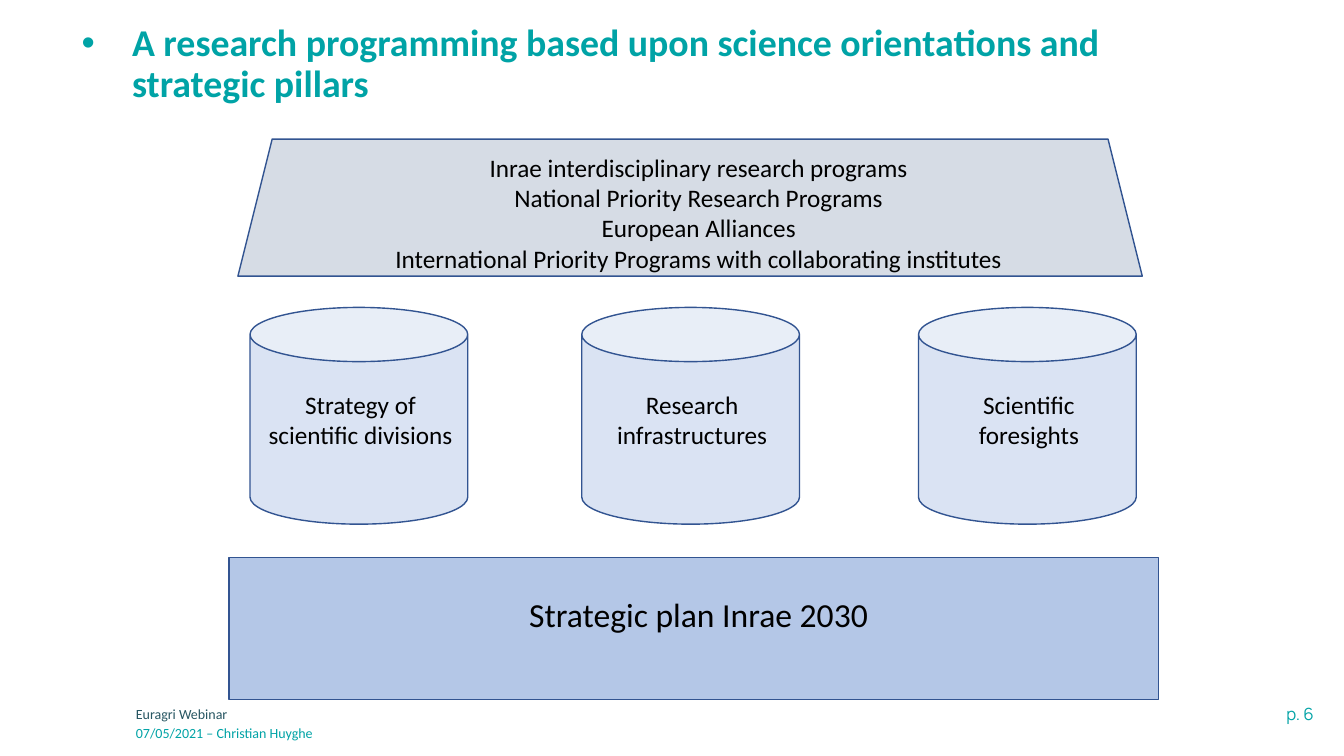
from lxml.etree import SubElement
from pptx import Presentation
from pptx.dml.color import RGBColor
from pptx.enum.shapes import MSO_SHAPE as Shape
from pptx.enum.text import MSO_ANCHOR as Anchor, PP_ALIGN as Align
from pptx.oxml.ns import qn
from pptx.util import Emu, Pt

PX = 9144
TEAL, DARK_TEAL, BLACK, OUTLINE = "00A3A6", "275662", "000000", "325491"


def px(length):
    return Emu(length * PX)


def color(value):
    return RGBColor.from_string(value)


def apply(target, values):
    for name, value in values.items():
        setattr(target, name, value)


def add_text(page, box, lines, size, hue=BLACK, align=Align.CENTER,
             font="Calibri", bold=False):
    area = page.shapes.add_textbox(*map(px, box))
    frame = area.text_frame
    frame.word_wrap = True
    for index, line in enumerate(lines):
        para = frame.paragraphs[0] if index == 0 else frame.add_paragraph()
        para.alignment = align
        span = para.add_run()
        span.text = line
        apply(span.font, {"name": font, "size": Pt(size), "bold": bold})
        span.font.color.rgb = color(hue)
    return frame


def add_block(page, kind, box, fill):
    block = page.shapes.add_shape(kind, *map(px, box))
    block.shadow.inherit = False
    block.fill.solid()
    block.fill.fore_color.rgb = color(fill)
    block.line.color.rgb = color(OUTLINE)
    block.line.width = Pt(1)


def add_title(page, box):
    frame = add_text(
        page, box,
        ["A research programming based upon science orientations and strategic pillars"],
        27, TEAL, Align.LEFT, bold=True)
    apply(frame, {"vertical_anchor": Anchor.MIDDLE, "margin_left": 0})
    para = frame.paragraphs[0]
    para.line_spacing = 0.9
    props = para._p.get_or_add_pPr()
    props.set("marL", str(px(50)))
    props.set("indent", str(px(-50)))
    SubElement(props, qn("a:buFont")).set("typeface", "Arial")
    SubElement(props, qn("a:buChar")).set("char", "•")


def add_roof(page, box):
    left, top, width, height = box
    add_block(page, Shape.TRAPEZOID, box, "D6DCE5")
    add_text(page, (left + 57, top + 8, 800, 131), [
        "Inrae interdisciplinary research programs",
        "National Priority Research Programs",
        "European Alliances",
        "International Priority Programs with collaborating institutes",
    ], 18)


def add_pillar(page, box, label):
    left, top, width, height = box
    add_block(page, Shape.CAN, box, "DAE3F3")
    add_text(page, (left + 6, top + 76, width - 9, 71), [label], 18)


def add_base(page, box):
    left, top, width, height = box
    add_block(page, Shape.RECTANGLE, box, "B4C7E7")
    add_text(page, (left + 9, top + 31, width - 8, 50),
             ["Strategic plan Inrae 2030"], 24)


def add_footer(page, box):
    left, top, width, height = box
    add_text(page, (left, top + 2, 734, 27), ["Euragri Webinar"],
             10, DARK_TEAL, Align.LEFT)
    add_text(page, (left, top + 21, 734, 28), ["07/05/2021 – Christian Huyghe"],
             10, TEAL, Align.LEFT)
    add_text(page, (left + width - 228, top, 228, 30), ["p. 6"],
             12, TEAL, Align.RIGHT, "Manrope")


def main():
    deck = Presentation()
    apply(deck, {"slide_width": px(1333), "slide_height": px(750)})
    page = deck.slides.add_slide(deck.slide_layouts[6])
    add_footer(page, (125, 693, 1188, 49))
    add_title(page, (81, 16, 1117, 97))
    add_base(page, (227, 553, 922, 141))
    pillars = {
        248: "Strategy of scientific divisions",
        577: "Research infrastructures",
        911: "Scientific foresights",
    }
    for left, label in pillars.items():
        add_pillar(page, (left, 305, 216, 215), label)
    add_roof(page, (236, 138, 897, 136))
    deck.save("out.pptx")


if __name__ == "__main__":
    main()
